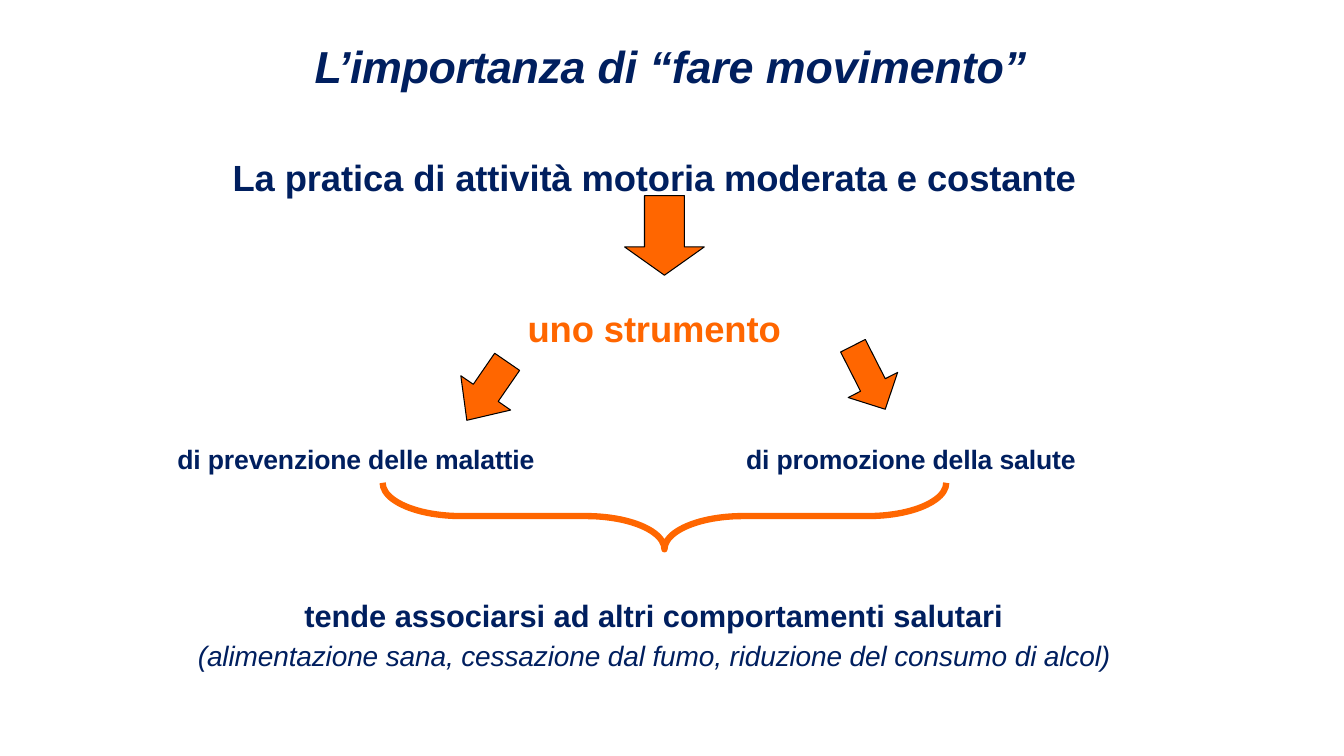
from dataclasses import dataclass
from math import atan2, degrees, hypot

from pptx import Presentation
from pptx.dml.color import RGBColor
from pptx.enum.shapes import MSO_SHAPE
from pptx.enum.text import MSO_ANCHOR, MSO_AUTO_SIZE, PP_ALIGN
from pptx.util import Inches, Pt


@dataclass(frozen=True)
class Theme:
    font: str = "Arial"
    navy: RGBColor = RGBColor(0x00, 0x1F, 0x5F)
    orange: RGBColor = RGBColor(0xFF, 0x66, 0x00)
    outline: RGBColor = RGBColor(0x00, 0x00, 0x00)
    title: Pt = Pt(32)
    statement: Pt = Pt(26)
    conclusion: Pt = Pt(22)
    examples: Pt = Pt(20)
    label: Pt = Pt(19)


THEME = Theme()


def set_all(target, values):
    for name, value in values.items():
        setattr(target, name, value)


def prepare_frame(frame, inset_top=0.01):
    set_all(frame, {
        "word_wrap": True, "auto_size": MSO_AUTO_SIZE.NONE,
        "vertical_anchor": MSO_ANCHOR.TOP,
        "margin_left": 0, "margin_right": 0, "margin_bottom": 0,
        "margin_top": Inches(inset_top),
    })
    return frame


def add_frame(slide, box, inset_top=0.01):
    return prepare_frame(slide.shapes.add_textbox(*map(Inches, box)).text_frame, inset_top)


def write(paragraph, text, size, color=THEME.navy, align=PP_ALIGN.CENTER,
          space_before=0, spacing=-0.1, bold=True, italic=False):
    set_all(paragraph, {"alignment": align, "space_before": Pt(space_before)})
    run = paragraph.add_run()
    run.text = text
    set_all(run.font, {"name": THEME.font, "size": size, "bold": bold, "italic": italic})
    run.font.color.rgb = color
    run._r.get_or_add_rPr().set("spc", str(round(spacing * 100)))


# Title
def add_title(slide, box):
    title = slide.shapes.title
    set_all(title, dict(zip(("left", "top", "width", "height"), map(Inches, box))))
    paragraph = prepare_frame(title.text_frame).paragraphs[0]
    for text, spacing in (("L’importanza ", -0.3), ("di “fare movimento”", -0.1)):
        write(paragraph, text, THEME.title, align=PP_ALIGN.LEFT,
              spacing=spacing, italic=True)


def add_arrow(slide, tail, tip, width, head):
    """Block arrow from tail to tip; head is the length of its point."""
    dx, dy = tip[0] - tail[0], tip[1] - tail[1]
    length = hypot(dx, dy)
    center_x, center_y = (tail[0] + tip[0]) / 2, (tail[1] + tip[1]) / 2
    arrow = slide.shapes.add_shape(
        MSO_SHAPE.DOWN_ARROW, Inches(center_x - width / 2), Inches(center_y - length / 2),
        Inches(width), Inches(length))
    arrow.adjustments[0] = 0.5
    arrow.adjustments[1] = head / min(width, length)
    arrow.rotation = degrees(atan2(-dx, dy))
    arrow.shadow.inherit = False
    arrow.fill.solid()
    arrow.fill.fore_color.rgb = THEME.orange
    arrow.line.color.rgb = THEME.outline
    arrow.line.width = Pt(0.75)


# Statement, its tool and the three arrows
def add_statement(slide, box):
    left, top = box[:2]
    frame = add_frame(slide, box)
    write(frame.paragraphs[0], "La pratica di attività motoria moderata e costante",
          THEME.statement)
    write(frame.add_paragraph(), "uno strumento", THEME.statement,
          color=THEME.orange, space_before=76.5)
    for tail, tip, width, head in (
        ((4.33, 0.41), (4.33, 1.2), 0.79, 0.28),
        ((2.77, 2.06), (2.37, 2.64), 0.6, 0.33),
        ((6.2, 1.9), (6.52, 2.53), 0.55, 0.27),
    ):
        add_arrow(slide, (left + tail[0], top + tail[1]),
                  (left + tip[0], top + tip[1]), width, head)


# Two aims joined by a brace
def add_aims(slide, box):
    left, top, width, height = box
    prevention_width, promotion_width = 3.62, 3.34
    for text, x, label_width in (
        ("di prevenzione delle malattie", left, prevention_width),
        ("di promozione della salute", left + width - promotion_width, promotion_width),
    ):
        frame = add_frame(slide, (x + 0.01, top, label_width, 0.34))
        write(frame.paragraphs[0], text, THEME.label, align=PP_ALIGN.LEFT)

    span, depth = 5.59, 0.66
    center_x, center_y = left + 4.84, top + height - depth / 2
    brace = slide.shapes.add_shape(
        MSO_SHAPE.RIGHT_BRACE, Inches(center_x - depth / 2), Inches(center_y - span / 2),
        Inches(depth), Inches(span))
    brace.rotation = 90
    brace.adjustments[0] = 1.18
    brace.adjustments[1] = 0.5
    brace.shadow.inherit = False
    brace.fill.background()
    brace.line.color.rgb = THEME.orange
    brace.line.width = Pt(4.5)


# Conclusion
def add_conclusion(slide, box):
    frame = add_frame(slide, box, inset_top=0.07)
    write(frame.paragraphs[0], "tende associarsi ad altri comportamenti salutari",
          THEME.conclusion, spacing=0)
    write(frame.add_paragraph(),
          "(alimentazione sana, cessazione dal fumo, riduzione del consumo di alcol)",
          THEME.examples, space_before=3.5, bold=False, italic=True)


def main():
    presentation = Presentation()
    set_all(presentation, {"slide_width": Inches(13.33), "slide_height": Inches(7.5)})
    slide = presentation.slides.add_slide(presentation.slide_layouts[5])
    add_title(slide, (3.12, 0.37, 7.14, 0.56))
    add_statement(slide, (2.26, 1.53, 8.46, 1.95))
    add_aims(slide, (1.75, 4.38, 8.98, 1.07))
    add_conclusion(slide, (1.91, 5.85, 9.15, 0.83))
    presentation.save("out.pptx")


if __name__ == "__main__":
    main()
